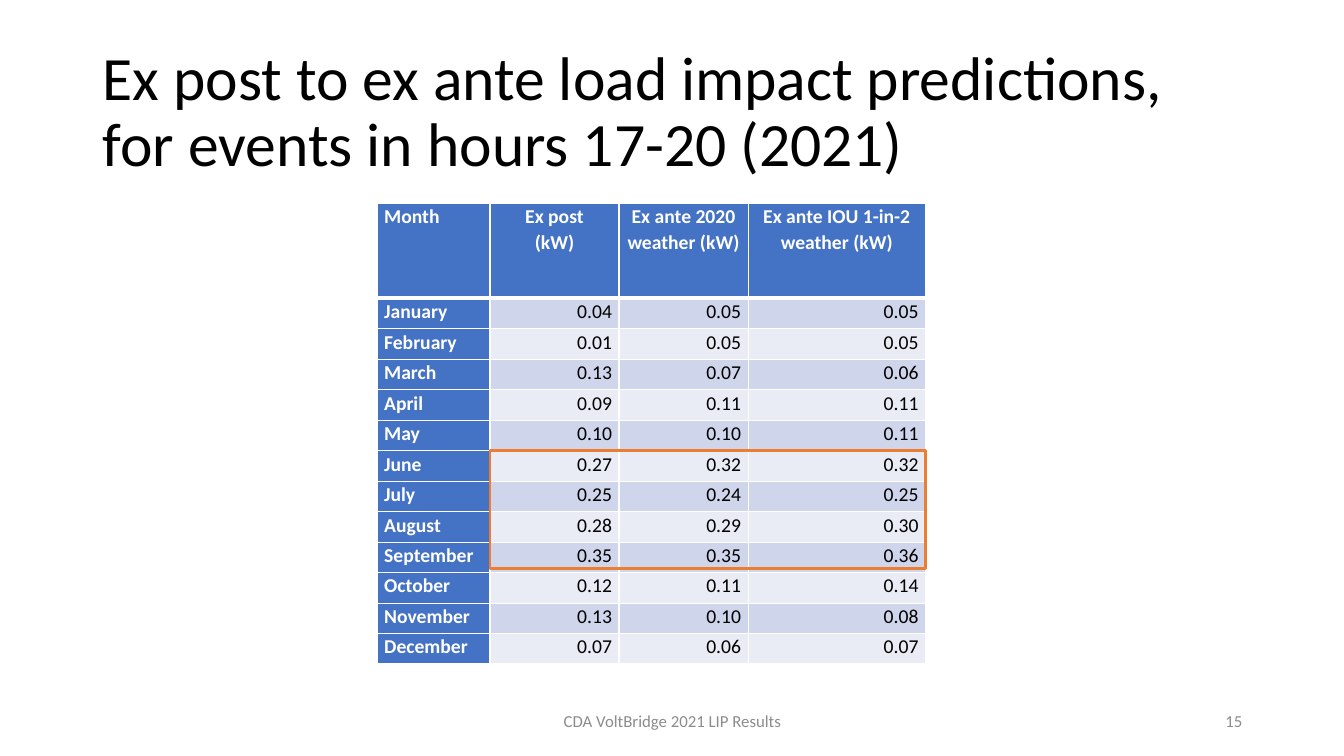
from pptx import Presentation
from pptx import util as u
from pptx.dml import color
from pptx.enum import shapes, text
from pptx.oxml import parse_xml
from pptx.oxml.ns import nsdecls

TITLE = "Ex post to ex ante load impact predictions, for events in hours 17-20 (2021)"
FOOTER = "CDA VoltBridge 2021 LIP Results"
PAGE = "15"
HEADINGS = ["Month", "Ex post\n(kW)", "Ex ante 2020 weather (kW)",
            "Ex ante IOU 1-in-2 weather (kW)"]
IMPACTS = [
    ("January", 0.04, 0.05, 0.05),
    ("February", 0.01, 0.05, 0.05),
    ("March", 0.13, 0.07, 0.06),
    ("April", 0.09, 0.11, 0.11),
    ("May", 0.10, 0.10, 0.11),
    ("June", 0.27, 0.32, 0.32),
    ("July", 0.25, 0.24, 0.25),
    ("August", 0.28, 0.29, 0.30),
    ("September", 0.35, 0.35, 0.36),
    ("October", 0.12, 0.11, 0.14),
    ("November", 0.13, 0.10, 0.08),
    ("December", 0.07, 0.06, 0.07),
]
FIRST_SUMMER_MONTH = "June"

FONT = "Calibri"
BLUE, BANDS, ORANGE = "4472C4", ("CFD5EA", "E9EBF5"), "ED7D31"
WHITE, BLACK, GREY = "FFFFFF", "000000", "8C8C8C"
LEFT, CENTER, RIGHT = text.PP_ALIGN.LEFT, text.PP_ALIGN.CENTER, text.PP_ALIGN.RIGHT

TABLE_LEFT, TABLE_TOP, TABLE_HEIGHT = 3.74, 2.02, 4.57
COLUMN_WIDTHS = [1.12, 1.28, 1.28, 1.76]
HEADER_HEIGHT = 0.94
ROW_HEIGHT = (TABLE_HEIGHT - HEADER_HEIGHT) / len(IMPACTS)
SUMMER_HEIGHT = 1.17


def rgb(value):
    return color.RGBColor.from_string(value)


def box(*lengths):
    return [u.Inches(length) for length in lengths]


def write(frame, content, size, ink, align, bold=False, spacing=None):
    """Fill a text frame, one paragraph for each line of content."""
    for i, line in enumerate(content.split("\n")):
        paragraph = frame.add_paragraph() if i else frame.paragraphs[0]
        paragraph.alignment = align
        paragraph.line_spacing = spacing
        run = paragraph.add_run()
        run.text = line
        run.font.name, run.font.size, run.font.bold = FONT, u.Pt(size), bold
        run.font.color.rgb = rgb(ink)


def add_borders(cell, bottom):
    """Draw white cell borders, 1 pt wide except for the bottom one."""
    for side, points in (("L", 1), ("R", 1), ("T", 1), ("B", bottom)):
        cell._tc.get_or_add_tcPr().append(parse_xml(
            f'<a:ln{side} {nsdecls("a")} w="{u.Pt(points)}"><a:solidFill>'
            f'<a:srgbClr val="{WHITE}"/></a:solidFill></a:ln{side}>'))


def fill_cell(cell, content, row, column):
    heading = row == 0 or column == 0
    align = LEFT if column == 0 else CENTER if row == 0 else RIGHT
    cell.margin_left = cell.margin_right = u.Inches(0.07)
    cell.margin_top = cell.margin_bottom = 0
    add_borders(cell, bottom=3 if row == 0 else 1)
    cell.fill.solid()
    cell.fill.fore_color.rgb = rgb(BLUE if heading else BANDS[(row - 1) % 2])
    write(cell.text_frame, content, 14, WHITE if heading else BLACK, align,
          bold=heading, spacing=1.07)


def add_table(slide):
    table = slide.shapes.add_table(
        len(IMPACTS) + 1, len(HEADINGS),
        *box(TABLE_LEFT, TABLE_TOP, sum(COLUMN_WIDTHS), TABLE_HEIGHT)).table
    table.first_col = True
    for column, width in zip(table.columns, COLUMN_WIDTHS):
        column.width = u.Inches(width)
    for i, row in enumerate(table.rows):
        row.height = u.Inches(ROW_HEIGHT if i else HEADER_HEIGHT)
    lines = [HEADINGS] + [(month, *(f"{kw:.2f}" for kw in values))
                          for month, *values in IMPACTS]
    for i, line in enumerate(lines):
        for j, content in enumerate(line):
            fill_cell(table.cell(i, j), content, i, j)


def add_summer_frame(slide):
    months = [month for month, *_ in IMPACTS]
    top = TABLE_TOP + HEADER_HEIGHT + months.index(FIRST_SUMMER_MONTH) * ROW_HEIGHT
    summer = slide.shapes.add_shape(
        shapes.MSO_SHAPE.RECTANGLE,
        *box(TABLE_LEFT + COLUMN_WIDTHS[0], top, sum(COLUMN_WIDTHS[1:]), SUMMER_HEIGHT))
    summer.shadow.inherit = False
    summer.fill.background()
    summer.line.color.rgb = rgb(ORANGE)
    summer.line.width = u.Pt(2)


def add_footer(slide, content, left, width, align):
    frame = slide.shapes.add_textbox(*box(left, 6.95, width, 0.4)).text_frame
    frame.word_wrap = True
    frame.vertical_anchor = text.MSO_ANCHOR.MIDDLE
    write(frame, content, 12, GREY, align)


def main():
    deck = Presentation()
    deck.slide_width, deck.slide_height = box(13.33, 7.5)
    slide = deck.slides.add_slide(deck.slide_layouts[5])

    title = slide.shapes.title
    title.left, title.top, title.width, title.height = box(0.92, 0.4, 11.5, 1.45)
    title.text_frame.auto_size = text.MSO_AUTO_SIZE.NONE
    title.text_frame.vertical_anchor = text.MSO_ANCHOR.MIDDLE
    write(title.text_frame, TITLE, 44, BLACK, LEFT, spacing=0.9)

    add_footer(slide, FOOTER, 4.42, 4.5, CENTER)
    add_footer(slide, PAGE, 9.42, 3, RIGHT)
    add_table(slide)
    add_summer_frame(slide)
    deck.save("out.pptx")


if __name__ == "__main__":
    main()
